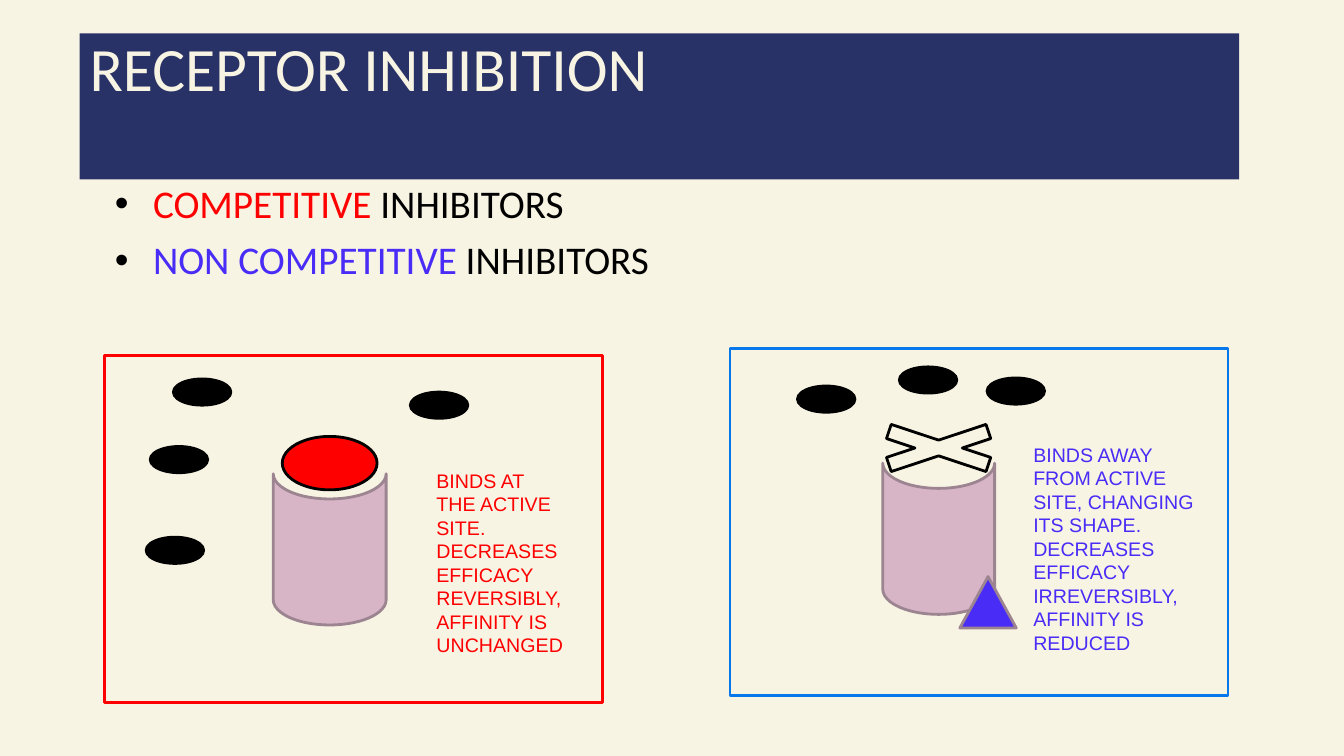
"""Build the receptor inhibition slide."""
import pptx
import pptx.dml.color
import pptx.enum.shapes
import pptx.enum.text
import pptx.oxml.ns
import pptx.util
from lxml import etree

Inches = pptx.util.Inches
Pt = pptx.util.Pt
SHAPE = pptx.enum.shapes.MSO_SHAPE

CREAM, NAVY, BLACK = "F8F4E4", "293267", "000000"
RED, VIOLET, BLUE = "FF0000", "492CF6", "0678EB"
PINK, MAUVE = "D7B5C6", "9C8490"

TITLE = "RECEPTOR INHIBITION"
BULLETS = [
    [("COMPETITIVE", RED), (" INHIBITORS", BLACK)],
    [("NON COMPETITIVE ", VIOLET), ("INHIBITORS", BLACK)],
]
NOTES = [
    ("BINDS AT THE ACTIVE SITE. DECREASES EFFICACY REVERSIBLY, AFFINITY IS UNCHANGED",
     (4.23, 4.6, 1.48, 1.99), RED),
    ("BINDS AWAY FROM ACTIVE SITE, CHANGING ITS SHAPE. DECREASES EFFICACY "
     "IRREVERSIBLY, AFFINITY IS REDUCED", (10.15, 4.34, 1.8, 2.22), VIOLET),
]
LIGAND_SIZE = (0.57, 0.26)
LIGANDS = [(9.79, 3.75), (8.92, 3.64), (7.91, 3.83),
           (1.49, 4.43), (1.72, 3.76), (1.45, 5.33), (4.07, 3.89)]
RECEPTORS = [(2.52, 4.89, 1.5, 1.12), (8.56, 4.79, 1.5, 1.11)]
PANEL_SIZE = (4.94, 3.44)
PANELS = [((1.04, 3.53), RED), ((7.24, 3.46), BLUE)]


def color(value):
    return pptx.dml.color.RGBColor.from_string(value)


def add_shape(slide, kind, box, fill=None, line=None):
    shape = slide.shapes.add_shape(kind, *map(Inches, box))
    shape.shadow.inherit = False
    if fill:
        shape.fill.solid()
        shape.fill.fore_color.rgb = color(fill)
    else:
        shape.fill.background()
    if line:
        shape.line.color.rgb = color(line)
        shape.line.width = Pt(2)
    else:
        shape.line.fill.background()
    return shape


def set_font(paragraph, name, size, value=None):
    paragraph.alignment = pptx.enum.text.PP_ALIGN.LEFT
    paragraph.font.name = name
    paragraph.font.size = Pt(size)
    if value:
        paragraph.font.color.rgb = color(value)


def add_text_box(slide, box):
    frame = slide.shapes.add_textbox(*map(Inches, box)).text_frame
    frame.word_wrap = True
    return frame


def add_bullet(paragraph):
    properties = paragraph._p.get_or_add_pPr()
    properties.set("marL", str(Inches(0.5)))
    properties.set("indent", str(Inches(-0.38)))
    qn = pptx.oxml.ns.qn
    bullet_color = etree.SubElement(properties, qn("a:buClr"))
    etree.SubElement(bullet_color, qn("a:srgbClr"), val=BLACK)
    etree.SubElement(properties, qn("a:buFont"), typeface="Arial")
    etree.SubElement(properties, qn("a:buChar"), char="•")


def add_bullets(slide):
    frame = add_text_box(slide, (0.92, 1.78, 11.5, 4.76))
    for index, parts in enumerate(BULLETS):
        paragraph = frame.add_paragraph() if index else frame.paragraphs[0]
        set_font(paragraph, "Calibri", 28)
        paragraph.line_spacing = 0.9
        paragraph.space_before = Pt(10)
        add_bullet(paragraph)
        for text, value in parts:
            run = paragraph.add_run()
            run.text = text
            run.font.color.rgb = color(value)


def add_title(slide):
    banner = add_shape(slide, SHAPE.RECTANGLE, (0.79, 0.33, 11.5, 1.45), NAVY)
    frame = banner.text_frame
    frame.word_wrap = True
    frame.vertical_anchor = pptx.enum.text.MSO_ANCHOR.TOP
    paragraph = frame.paragraphs[0]
    paragraph.text = TITLE
    paragraph.line_spacing = 0.9
    set_font(paragraph, "Calibri", 44, CREAM)


def add_diagrams(slide):
    for text, box, value in NOTES:
        frame = add_text_box(slide, box)
        frame.auto_size = pptx.enum.text.MSO_AUTO_SIZE.SHAPE_TO_FIT_TEXT
        frame.paragraphs[0].text = text
        set_font(frame.paragraphs[0], "Arial", 14, value)
    for corner in LIGANDS:
        add_shape(slide, SHAPE.OVAL, corner + LIGAND_SIZE, BLACK, BLACK)
    cross = add_shape(slide, SHAPE.MATH_MULTIPLY, (8.36, 4.13, 1.9, 0.63), line=BLACK)
    cross.adjustments[0] = 0.235
    for box in RECEPTORS:
        receptor = add_shape(slide, SHAPE.FLOWCHART_STORED_DATA, box, PINK, MAUVE)
        receptor.rotation = 270
    add_shape(slide, SHAPE.OVAL, (2.8, 4.33, 0.94, 0.53), RED, BLACK)
    add_shape(slide, SHAPE.ISOSCELES_TRIANGLE, (9.52, 5.72, 0.56, 0.51), VIOLET, MAUVE)
    for corner, value in PANELS:
        add_shape(slide, SHAPE.RECTANGLE, corner + PANEL_SIZE, line=value)


def main():
    presentation = pptx.Presentation()
    presentation.slide_width = Inches(13.33)
    presentation.slide_height = Inches(7.5)
    slide = presentation.slides.add_slide(presentation.slide_layouts[6])
    slide.background.fill.solid()
    slide.background.fill.fore_color.rgb = color(CREAM)
    add_bullets(slide)
    add_title(slide)
    add_diagrams(slide)
    presentation.save("out.pptx")


if __name__ == "__main__":
    main()
